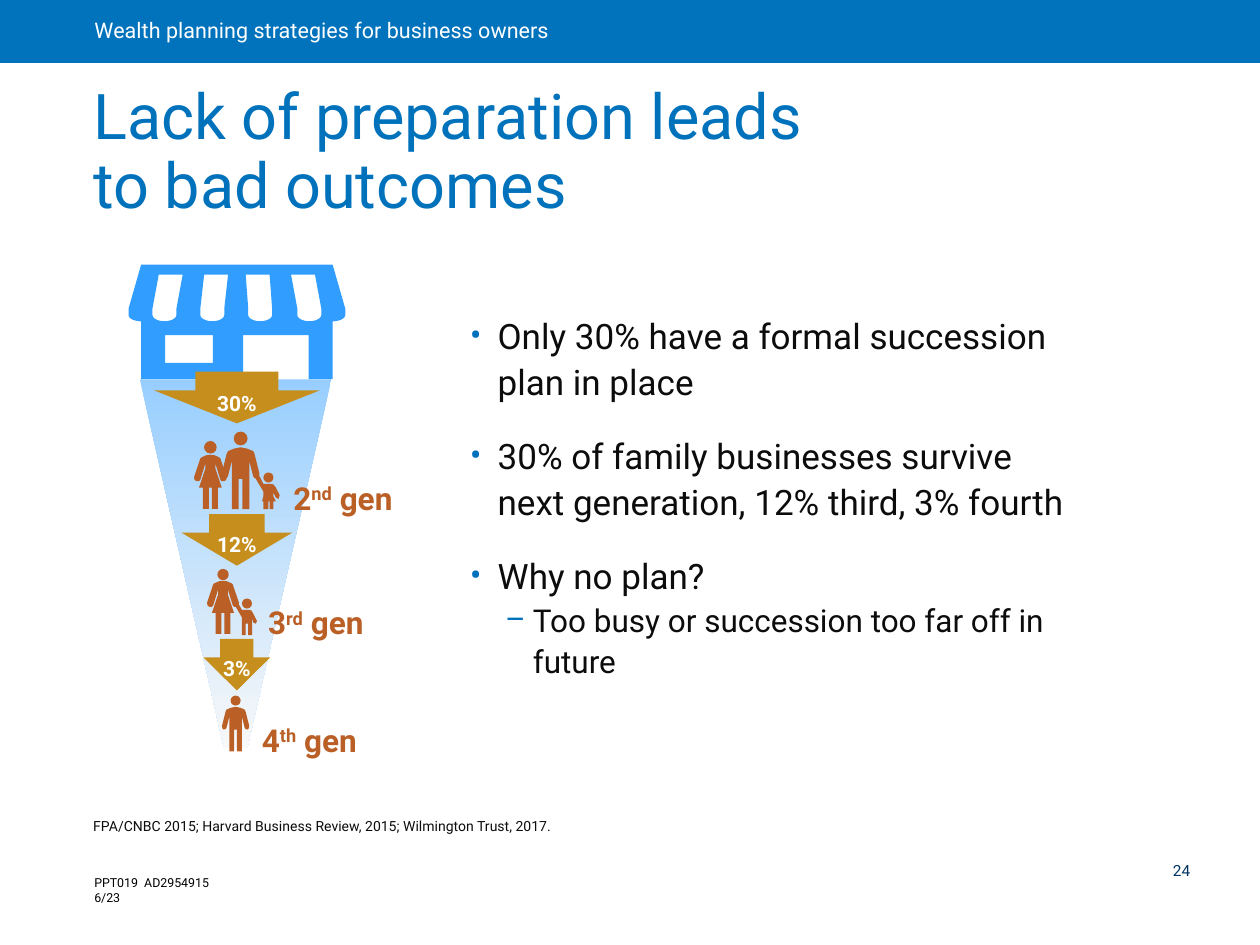
from math import cos, pi, sin

from lxml import etree
from pptx import Presentation
from pptx.dml.color import RGBColor
from pptx.enum.shapes import MSO_SHAPE
from pptx.enum.text import MSO_ANCHOR, PP_ALIGN
from pptx.oxml.ns import qn
from pptx.util import Inches, Pt

TOP, MID, LOW = MSO_ANCHOR.TOP, MSO_ANCHOR.MIDDLE, MSO_ANCHOR.BOTTOM
LEFT, CENTER = PP_ALIGN.LEFT, PP_ALIGN.CENTER
FONT = "Roboto"
BLUE, RUST, GOLD, SHOP, INK = "0072BC", "BA6027", "C68F1D", "319DFF", "0C0C0C"

# Content
HEAD = "Wealth planning strategies for business owners"
TITLE = "Lack of preparation leads\nto bad outcomes"
SOURCE = ("FPA/CNBC 2015; Harvard Business Review, 2015; "
          "Wilmington Trust, 2017.")
CODE = "PPT019  AD2954915\n6/23"
PAGE = "24"
POINTS = [  # text, level
    ("Only 30% have a formal succession plan in place", 0),
    ("30% of family businesses survive next generation, "
     "12% third, 3% fourth", 0),
    ("Why no plan?", 0),
    ("Too busy or succession too far off in future", 1),
]
LEVELS = [dict(mark="•", left=0.22, size=20), dict(mark="–", left=0.5, size=18)]
ARROWS = [  # text, top, width, space above text
    ("30%", 2.95, 1.32, 0.15), ("12%", 4.08, 0.88, 0.14), ("3%", 5.07, 0.53, 0.13)]
GENS = [("2^nd^ gen", 2.23, 3.75), ("3^rd^ gen", 2.03, 4.74),
        ("4^th^ gen", 1.98, 5.67)]  # ^ marks raised text

# Figures in hundredths of an inch; adults are left halves about x = 0
MAN = [(0, 0), (-5, 1), (-10, 3), (-11, 5), (-15, 21), (-14.5, 24), (-13, 25),
       (-11, 24.5), (-10, 23), (-7, 11), (-7, 49), (-1.5, 49), (-1.5, 25)]
WOMAN = [(0, 0), (-3, 0.3), (-7, 2), (-8, 3), (-13, 18), (-12.5, 20), (-11, 21),
         (-9, 21), (-8, 20), (-4, 7), (-4, 11), (-9, 26), (-6, 26), (-6, 43),
         (-1.2, 43), (-1.2, 26)]
GIRL = [(3, 0), (1, -0.5), (0, 2), (6, 12), (6, 16), (5, 20), (6, 20), (6, 26),
        (10, 26), (10, 20), (11, 20), (11, 26), (14, 26), (14, 20), (16, 20),
        (14, 16), (14, 13), (16, 17), (18, 18), (19, 15), (16, 9), (14, 6.5),
        (12, 6), (6, 6)]
BOY = [(3, 1), (1, 0), (0, 2), (7, 14), (7, 28), (10, 28), (10, 19), (12, 19),
       (12, 28), (15, 28), (15, 14), (16, 18), (18, 19), (19, 17), (16, 11),
       (14.5, 8.5), (12, 8), (7, 8)]


def mirror(half):
    return half + [(-x, y) for x, y in reversed(half[1:])]


PEOPLE = [  # outline, x, y, scale, head centre x, head centre y, head size
    (mirror(WOMAN), 1.67, 3.61, 1, 1.67, 3.55, 0.1),
    (mirror(MAN), 1.91, 3.55, 1, 1.91, 3.48, 0.11),
    (GIRL, 2.03, 3.78, 1, 2.13, 3.79, 0.08),
    (mirror(WOMAN), 1.77, 4.61, 0.98, 1.77, 4.56, 0.09),
    (BOY, 1.85, 4.76, 1, 1.96, 4.79, 0.08),
    (mirror(MAN), 1.87, 5.61, 0.72, 1.87, 5.56, 0.08),
]


def rgb(code):
    return RGBColor.from_string(code)


def plain(shape, color=None):
    shape.shadow.inherit = False
    shape.line.fill.background()
    if color:
        shape.fill.solid()
        shape.fill.fore_color.rgb = rgb(color)
    return shape


def add(kind, x, y, w, h, color=None):
    return plain(slide.shapes.add_shape(
        kind, Inches(x), Inches(y), Inches(w), Inches(h)), color)


def box(x, y, w, h):
    return slide.shapes.add_textbox(Inches(x), Inches(y), Inches(w), Inches(h))


def frame(shape, pad=(0.1, 0.05, 0.1, 0.05), anchor=TOP, wrap=True):
    tf = shape.text_frame
    tf.margin_left, tf.margin_top, tf.margin_right, tf.margin_bottom = map(Inches, pad)
    tf.vertical_anchor, tf.word_wrap = anchor, wrap
    return tf


def write(tf, text, size=12, color=INK, bold=False, align=LEFT, gap=1,
          before=0, left=0, hang=0, mark=None, level=0):
    """Fill the first paragraph, or add one when it is taken."""
    par = tf.paragraphs[0]
    if par.runs:
        par = tf.add_paragraph()
    props = par._p.get_or_add_pPr()
    if left:
        props.set("marL", str(Inches(left)))
        props.set("indent", str(-Inches(hang)))
    if mark:
        tint = etree.SubElement(props, qn("a:buClr"))
        etree.SubElement(tint, qn("a:srgbClr")).set("val", BLUE)
        etree.SubElement(props, qn("a:buFont")).set("typeface", FONT)
        etree.SubElement(props, qn("a:buChar")).set("char", mark)
    par.level, par.alignment, par.line_spacing = level, align, gap
    par.space_before = Pt(before)
    for row, line in enumerate(text.split("\n")):
        if row:
            par.add_line_break()
        for part, words in enumerate(line.split("^")):
            run = par.add_run()
            run.text = words
            font = run.font
            font.name, font.size, font.bold = FONT, Pt(size), bold
            font.color.rgb = rgb(color)
            if part % 2:
                font._element.set("baseline", "30000")


def outline(loops, color):
    """Closed loops of points in inches, drawn as one shape."""
    loops = [[(x * 1000, y * 1000) for x, y in loop] for loop in loops]
    pen = slide.shapes.build_freeform(*loops[0][0], scale=914.4)
    for n, loop in enumerate(loops):
        if n:
            pen.move_to(*loop[0])
        pen.add_line_segments(loop[1:], close=True)
    plain(pen.convert_to_shape(), color)


def arc(x, y, rx, ry, start, end, steps=12):
    turns = [start + (end - start) * n / steps for n in range(steps + 1)]
    return [(x + rx * cos(t), y + ry * sin(t)) for t in turns]


prs = Presentation()
prs.slide_width, prs.slide_height = Inches(10), Inches(7.5)
slide = prs.slides.add_slide(prs.slide_layouts[5])

# Header bar and title
bar = add(MSO_SHAPE.RECTANGLE, 0, 0, 10, 0.5, "0073BC")
write(frame(bar, (0.75, 0, 0.22, 0), MID), HEAD, size=12.3, color="FFFFFF", gap=0.9)
title = slide.shapes.title
title.left, title.top = Inches(0.63), Inches(0.66)
title.width, title.height = Inches(9.04), Inches(1.16)
write(frame(title, (0.11, 0.06, 0.11, 0.06), LOW), TITLE, size=36, color=BLUE, gap=0.9)

# Fading funnel
funnel = add(MSO_SHAPE.TRAPEZOID, 1.11, 3.01, 1.52, 2.93)
funnel.rotation = 180
funnel.adjustments[0] = 0.44
funnel.fill.gradient()
funnel.fill.gradient_angle = 90
for stop, place, code in zip(funnel.fill.gradient_stops, (0, 1), ("98CEFF", "F8F8F8")):
    stop.position, stop.color.rgb = place, rgb(code)

# Shop: outer wall with awning, window and four stripes cut out
wall = ([(1.12, 2.1), (2.64, 2.1), (2.74, 2.45)]
        + arc(2.64, 2.5, 0.1, 0.05, 0, pi / 2)
        + [(2.64, 3.01), (2.45, 3.01), (2.45, 2.66), (1.93, 2.66),
           (1.93, 3.01), (1.12, 3.01)]
        + arc(1.12, 2.5, 0.1, 0.05, pi / 2, pi) + [(1.02, 2.45)])
window = [(1.31, 2.66), (1.69, 2.66), (1.69, 2.88), (1.31, 2.88)]
stripes = [[(a, 2.18), (a + 0.19, 2.18), (b + 0.19, 2.45)]
           + arc(b + 0.095, 2.5, 0.095, 0.05, 0, pi) + [(b, 2.45)]
           for a, b in ((1.26, 1.21), (1.62, 1.59), (1.95, 1.97), (2.31, 2.36))]
outline([wall, window] + stripes, SHOP)

# Arrows
for text, y, w, drop in ARROWS:
    arrow = add(MSO_SHAPE.DOWN_ARROW, 1.88 - w / 2, y, w, 0.41, GOLD)
    arrow.adjustments[0], arrow.adjustments[1] = 0.5, 0.64
    write(frame(arrow, (0, drop, 0, 0), wrap=False), text, color="FFFFFF",
          bold=True, align=CENTER)

# Families and their labels
for body, x, y, scale, hx, hy, d in PEOPLE:
    outline([[(x + a * scale / 100, y + b * scale / 100) for a, b in body]], RUST)
    add(MSO_SHAPE.OVAL, hx - d / 2, hy - d / 2, d, d, RUST)
for text, x, y in GENS:
    write(frame(box(x, y, 1.1, 0.4)), text, size=18, color=RUST, bold=True)

# Points
tf = frame(box(3.62, 2.4, 5.06, 4.15), (0.11, 0.06, 0.11, 0.06))
for n, (text, level) in enumerate(POINTS):
    write(tf, text, gap=1.1, hang=0.22, level=level,
          before=16 if n and not level else 0, **LEVELS[level])

# Source, code and page number
write(frame(box(0.63, 6.46, 8.62, 0.22), (0.11, 0.06, 0.11, 0.06), LOW), SOURCE,
      size=8, gap=1.1, left=0.22, hang=0.22)
write(frame(box(0.65, 6.9, 1.2, 0.34), wrap=False), CODE, size=7.1, color="000000")
write(frame(box(9.31, 6.81, 0.56, 0.22), (0, 0.04, 0.04, 0.04)), PAGE, size=8.8,
      color="003463", gap=0.9)

prs.save("out.pptx")
